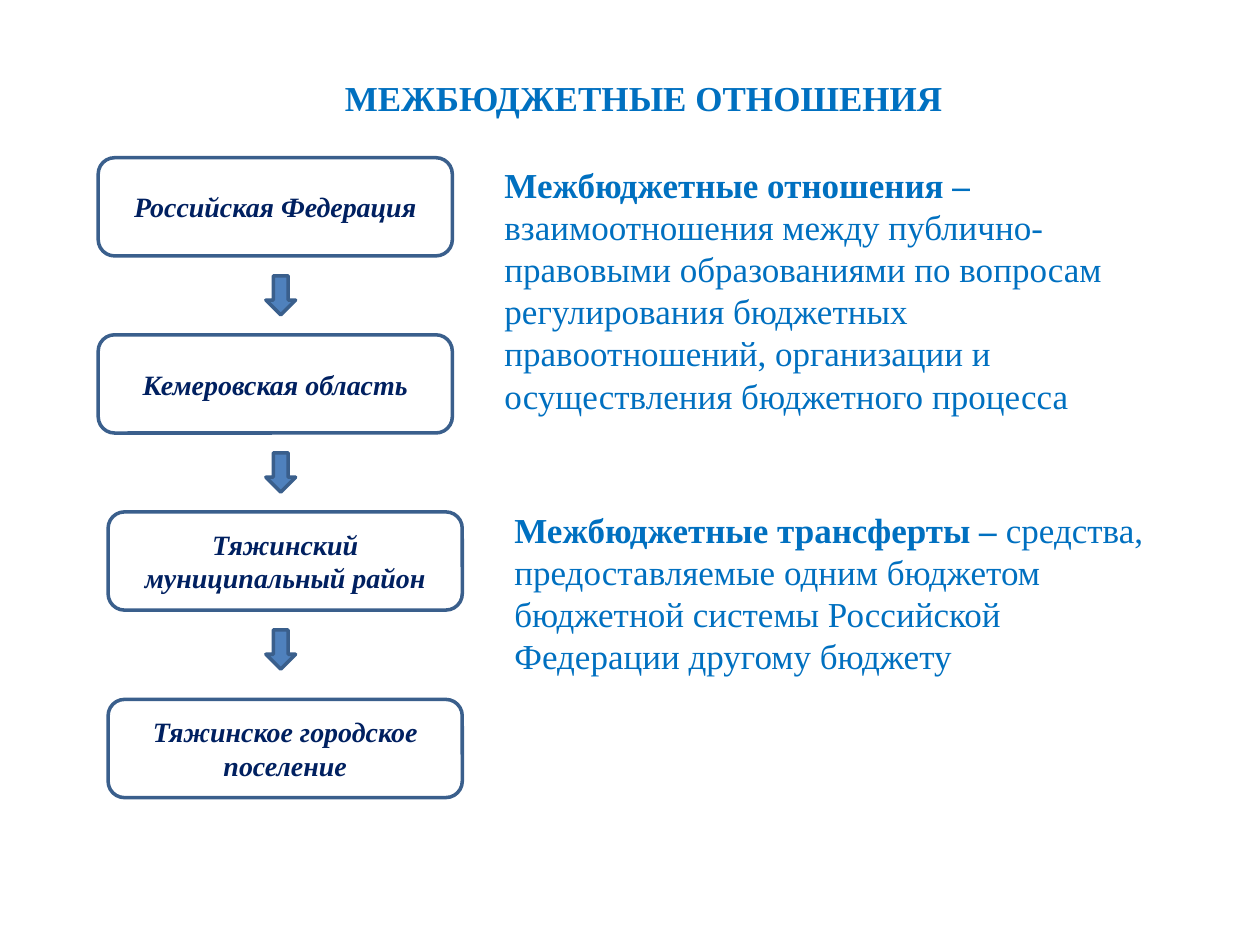
from pptx import Presentation
from pptx.dml.color import RGBColor
from pptx.enum.shapes import MSO_SHAPE
from pptx.enum.text import MSO_ANCHOR, PP_ALIGN
from pptx.util import Cm, Pt

FACE = "Times New Roman"
HEAD = {"name": FACE, "size": Pt(20), "bold": True}
BODY = {**HEAD, "bold": False}
LEVEL = {"name": FACE, "size": Pt(16), "bold": True, "italic": True}
BLUE, NAVY, EDGE = "0070C0", "002060", "3A5F8C"
TOP, STEP = 3.18, 3.57

LEVELS = [
    ("Российская Федерация", 1.98, TOP),
    ("Кемеровская область", 1.98, TOP + STEP),
    ("Тяжинский муниципальный район", 2.18, TOP + 2 * STEP),
    ("Тяжинское городское поселение", 2.18, 14.1),
]
TERMS = [
    ("Межбюджетные отношения – ",
     "взаимоотношения между публично-правовыми образованиями по вопросам "
     "регулирования бюджетных правоотношений, организации и осуществления "
     "бюджетного процесса", (9.92, 3.18, 13.7, 5.38)),
    ("Межбюджетные трансферты – ",
     "средства, предоставляемые одним бюджетом бюджетной системы Российской "
     "Федерации другому бюджету", (10.12, 10.12, 13.7, 3.68)),
]


def paint(color, code):
    """Set a color format from a hex string."""
    color.rgb = RGBColor.from_string(code)


def write(para, text, style, code):
    """Add a formatted run to a paragraph."""
    run = para.add_run()
    run.text = text
    for key, value in style.items():
        setattr(run.font, key, value)
    paint(run.font.color, code)


def add_form(slide, kind, box, fill):
    """Add a filled and outlined shape without a shadow."""
    form = slide.shapes.add_shape(kind, *map(Cm, box))
    form.shadow.inherit = False
    form.fill.solid()
    paint(form.fill.fore_color, fill)
    paint(form.line.color, EDGE)
    form.line.width = Pt(2)
    return form


def add_level(slide, text, left, top):
    """Add a rounded box naming one budget level."""
    form = add_form(slide, MSO_SHAPE.ROUNDED_RECTANGLE,
                    (left, top, 7.14, 1.98), "FFFFFF")
    frame = form.text_frame
    frame.word_wrap = True
    frame.vertical_anchor = MSO_ANCHOR.MIDDLE
    para = frame.paragraphs[0]
    para.alignment = PP_ALIGN.CENTER
    write(para, text, LEVEL, NAVY)


def add_term(slide, term, sense, box):
    """Add a bold term followed by its definition."""
    frame = slide.shapes.add_textbox(*map(Cm, box)).text_frame
    frame.word_wrap = True
    para = frame.paragraphs[0]
    write(para, term, HEAD, BLUE)
    write(para, sense, BODY, BLUE)


def set_title(slide, text):
    """Place and format the slide title."""
    title = slide.shapes.title
    place = {"left": 1.57, "top": 1.4, "width": 22.81, "height": 1.12}
    for key, value in place.items():
        setattr(title, key, Cm(value))
    title.text_frame.vertical_anchor = MSO_ANCHOR.MIDDLE
    para = title.text_frame.paragraphs[0]
    para.alignment = PP_ALIGN.CENTER
    write(para, text, HEAD, BLUE)


def main():
    """Build and save the slide."""
    deck = Presentation()
    deck.slide_width, deck.slide_height = Cm(25.4), Cm(19.05)
    slide = deck.slides.add_slide(deck.slide_layouts[5])
    set_title(slide, "МЕЖБЮДЖЕТНЫЕ ОТНОШЕНИЯ")
    for level in LEVELS:
        add_level(slide, *level)
    for row in range(len(LEVELS) - 1):
        add_form(slide, MSO_SHAPE.DOWN_ARROW,
                 (5.36, 5.56 + row * STEP, 0.6, 0.79), "4F81BD")
    for term in TERMS:
        add_term(slide, *term)
    deck.save("out.pptx")


if __name__ == "__main__":
    main()
